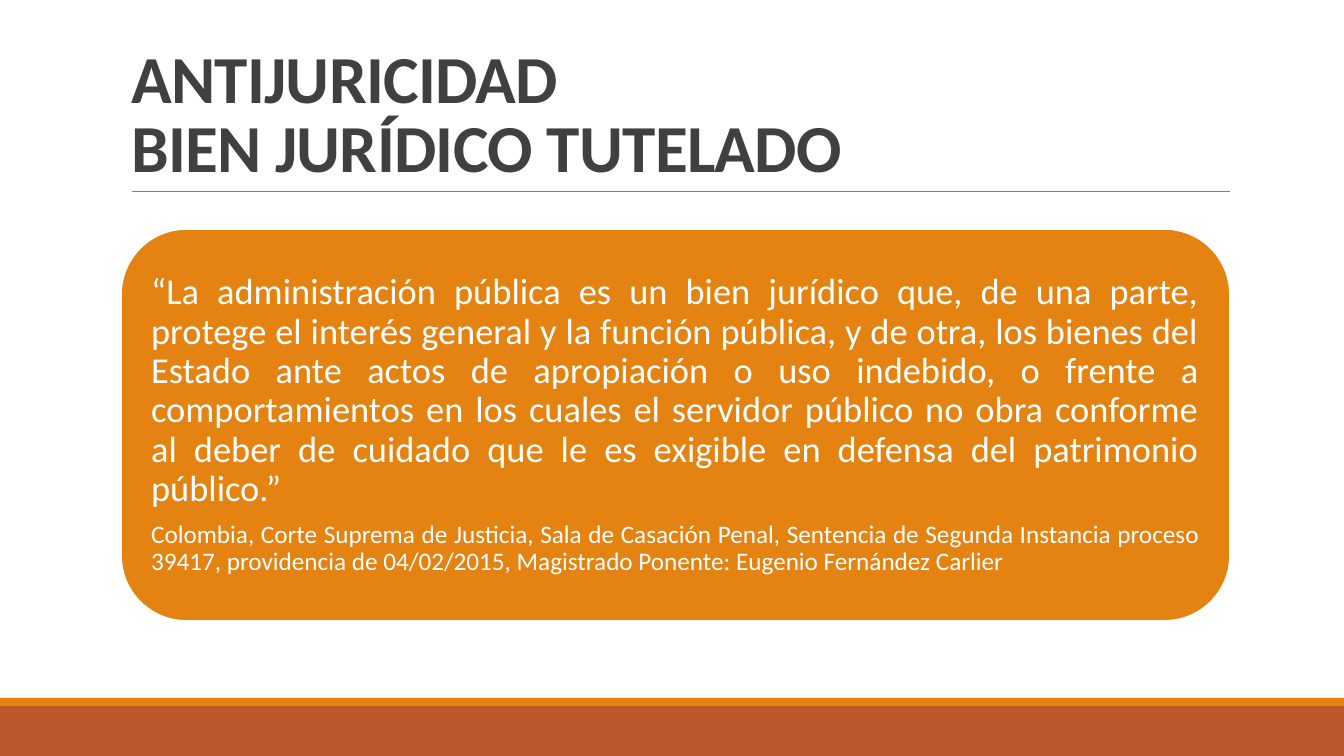
from pptx import Presentation
from pptx import util as u
from pptx.dml.color import RGBColor
from pptx.enum import shapes, text
from lxml import etree

PX = 12192000 / 1344
WHITE = RGBColor(0xFF, 0xFF, 0xFF)
DARK = RGBColor(0x40, 0x40, 0x40)
GREY = RGBColor(0x80, 0x80, 0x80)
ORANGE = RGBColor(0xE4, 0x83, 0x12)
RUST = RGBColor(0xBD, 0x58, 0x2C)


def px(*sizes):
    return [u.Emu(round(size * PX)) for size in sizes]


def style(run, size, color):
    run.font.name = "Calibri"
    run.font.size = u.Pt(size)
    run.font.color.rgb = color


deck = Presentation()
deck.slide_width, deck.slide_height = px(1344, 756)
slide = deck.slides.add_slide(deck.slide_layouts[5])

for top, high, color in [(706, 50, RUST), (698, 8, ORANGE)]:
    band = slide.shapes.add_shape(
        shapes.MSO_SHAPE.RECTANGLE, *px(0, top, 1344, high))
    band.shadow.inherit = False
    band.fill.solid()
    band.fill.fore_color.rgb = color
    band.line.fill.background()

rule = slide.shapes.add_connector(
    shapes.MSO_CONNECTOR.STRAIGHT, *px(132, 191, 1230, 191))
rule.line.color.rgb = GREY
rule.line.width = u.Pt(0.5)
props = rule._element.spPr
etree.SubElement(
    props, "{http://schemas.openxmlformats.org/drawingml/2006/main}effectLst")

title = slide.shapes.title
title.left, title.top, title.width, title.height = px(121, 31, 1109, 160)
frame = title.text_frame
frame.word_wrap = True
frame.auto_size = text.MSO_AUTO_SIZE.NONE
frame.vertical_anchor = text.MSO_ANCHOR.BOTTOM
head = frame.paragraphs[0]
head.alignment = text.PP_ALIGN.LEFT
head.line_spacing = 0.85
for spot, words in enumerate(["ANTIJURICIDAD", "BIEN JURÍDICO TUTELADO"]):
    if spot:
        head.add_line_break()
    run = head.add_run()
    run.text = words
    style(run, 48, DARK)
    run.font.bold = True
    run.font._element.set("spc", "-50")

card = slide.shapes.add_shape(
    shapes.MSO_SHAPE.ROUNDED_RECTANGLE, *px(121, 229, 1109, 392))
card.shadow.inherit = False
card.fill.solid()
card.fill.fore_color.rgb = ORANGE
card.line.color.rgb = WHITE
card.line.width = u.Pt(1.25)
frame = card.text_frame
frame.word_wrap = True
frame.vertical_anchor = text.MSO_ANCHOR.MIDDLE
(frame.margin_left, frame.margin_top,
 frame.margin_right, frame.margin_bottom) = px(11, 11, 11, 11)

quote = (
    "“La administración pública es un bien jurídico que, de una parte, "
    "protege el interés general y la función pública, y de otra, los bienes "
    "del Estado ante actos de apropiación o uso indebido, o frente a "
    "comportamientos en los cuales el servidor público no obra conforme al "
    "deber de cuidado que le es exigible en defensa del patrimonio público.”")
source = (
    "Colombia, Corte Suprema de Justicia, Sala de Casación Penal, Sentencia "
    "de Segunda Instancia proceso 39417, providencia de 04/02/2015, "
    "Magistrado Ponente: Eugenio Fernández Carlier")
for spot, (words, size, after) in enumerate([(quote, 26, 9), (source, 18, 6)]):
    para = frame.add_paragraph() if spot else frame.paragraphs[0]
    para.alignment = text.PP_ALIGN.JUSTIFY
    para.line_spacing = 0.9
    para.space_after = u.Pt(after)
    run = para.add_run()
    run.text = words
    style(run, size, WHITE)

deck.save("out.pptx")
